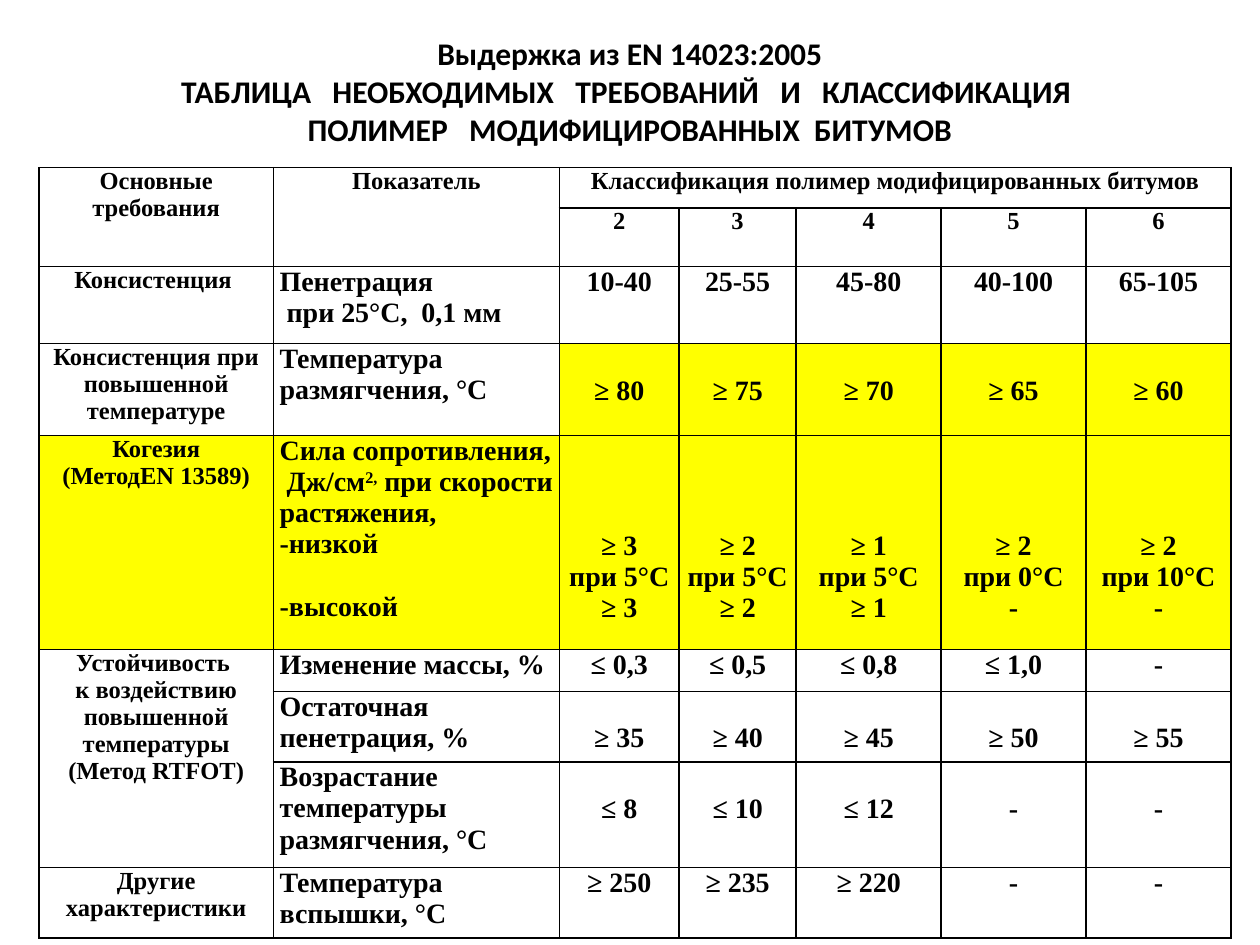
from lxml.etree import SubElement
from pptx import Presentation
from pptx.dml.color import RGBColor
from pptx.enum.text import PP_ALIGN as Align
from pptx.oxml.ns import qn
from pptx.util import Inches, Pt

BLACK = RGBColor(0, 0, 0)
YELLOW = RGBColor(255, 255, 0)
SERIF = "Times New Roman"
LINE = 0.25  # height of one 16 pt line, inches

TITLE = [
    "Выдержка из EN 14023:2005",
    "ТАБЛИЦА   НЕОБХОДИМЫХ   ТРЕБОВАНИЙ   И   КЛАССИФИКАЦИЯ ",
    "ПОЛИМЕР   МОДИФИЦИРОВАННЫХ  БИТУМОВ",
]
HEADS = ["Основные требования", "Показатель",
         "Классификация полимер модифицированных битумов"]
CLASSES = ["2", "3", "4", "5", "6"]

# requirement, indicator, values, lines above the values, yellow from column
ROWS = [
    ("Консистенция ", "Пенетрация\n при 25°С,  0,1 мм",
     ["10-40", "25-55", "45-80", "40-100", "65-105"], 0, None),
    ("Консистенция при повышенной температуре", "Температура размягчения, °С",
     ["≥ 80", "≥ 75", "≥ 70", "≥ 65", "≥ 60"], 1, 2),
    ("Когезия\n(МетодEN 13589)",
     "Сила сопротивления,  Дж/см^2,^ при скорости растяжения,\n-низкой\n-высокой",
     ["≥ 3\nпри 5°С\n≥ 3", "≥ 2\nпри 5°С\n≥ 2", "≥ 1\nпри 5°С\n≥ 1",
      "≥ 2\nпри 0°С\n-", "≥ 2\nпри 10°С\n-"], 3, 0),
    ("Устойчивость \nк воздействию повышенной температуры\n(Метод RTFOT)",
     "Изменение массы, %", ["≤ 0,3", "≤ 0,5", "≤ 0,8", "≤ 1,0", "-"], 0, None),
    ("", "Остаточная пенетрация, %",
     ["≥ 35", "≥ 40", "≥ 45", "≥ 50", "≥ 55"], 1, None),
    ("", "Возрастание температуры размягчения, °С",
     ["≤ 8", "≤ 10", "≤ 12", "-", "-"], 1, None),
    ("Другие характеристики", "Температура вспышки, °С",
     ["≥ 250", "≥ 235", "≥ 220", "-", "-"], 0, None),
]
WIDTHS = [1.86, 2.27, 0.95, 0.93, 1.15, 1.15, 1.15]
HEIGHTS = [0.32, 0.43, 0.61, 0.73, 1.7, 0.33, 0.56, 0.84, 0.56]
MERGES = [(0, 0, 1, 0), (0, 1, 1, 1), (0, 2, 0, 6), (5, 0, 7, 0)]


def write(frame, text, size=14, font=SERIF, align=Align.CENTER):
    """Fill a frame: one paragraph a line, superscript between ^ marks."""
    frame.word_wrap = True
    for i, line in enumerate(text.split("\n")):
        para = frame.add_paragraph() if i else frame.paragraphs[0]
        para.alignment = align
        para.font.size = Pt(size)
        for j, part in enumerate(line.split("^")):
            run = para.add_run()
            run.text = part
            run.font.name = font
            run.font.size = Pt(size)
            run.font.bold = True
            run.font.color.rgb = BLACK
            if j % 2:
                run.font._element.set("baseline", "30000")


def border(cell):
    props = cell._tc.get_or_add_tcPr()
    for i, side in enumerate(("a:lnL", "a:lnR", "a:lnT", "a:lnB")):
        edge = props.makeelement(qn(side), {"w": str(Pt(1))})
        fill = SubElement(edge, qn("a:solidFill"))
        SubElement(fill, qn("a:srgbClr"), val=str(BLACK))
        props.insert(i, edge)


def put(cell, text, drop=0, **style):
    cell.margin_top = Inches(drop * LINE)
    if text:
        write(cell.text_frame, text, **style)


def main():
    deck = Presentation()
    deck.slide_width, deck.slide_height = Inches(10), Inches(7.5)
    slide = deck.slides.add_slide(deck.slide_layouts[6])

    box = slide.shapes.add_textbox(Inches(0.5), Inches(0.27), Inches(9), Inches(1.11))
    box.text_frame.margin_top = 0
    write(box.text_frame, "\n".join(TITLE), size=18, font="Calibri")

    table = slide.shapes.add_table(
        len(HEIGHTS), len(WIDTHS), Inches(0.31), Inches(1.33),
        Inches(sum(WIDTHS)), Inches(sum(HEIGHTS))).table
    table.first_row = table.horz_banding = False
    for col, width in zip(table.columns, WIDTHS):
        col.width = Inches(width)
    for row, height in zip(table.rows, HEIGHTS):
        row.height = Inches(height)
    for top, left, low, right in MERGES:
        table.cell(top, left).merge(table.cell(low, right))
    for cell in (c for row in table.rows for c in row.cells):
        cell.margin_left = cell.margin_right = Inches(0.05)
        cell.margin_top = cell.margin_bottom = 0
        cell.fill.background()
        border(cell)

    for c, head in enumerate(HEADS):
        put(table.cell(0, c), head)
    for c, name in enumerate(CLASSES, 2):
        put(table.cell(1, c), name)
    for r, (need, mark, values, drop, yellow) in enumerate(ROWS, 2):
        put(table.cell(r, 0), need)
        put(table.cell(r, 1), mark, size=16, align=Align.LEFT)
        for c, value in enumerate(values, 2):
            put(table.cell(r, c), value, drop, size=16)
        if yellow is not None:
            for c in range(yellow, len(WIDTHS)):
                table.cell(r, c).fill.solid()
                table.cell(r, c).fill.fore_color.rgb = YELLOW
    # the high-speed label lines up with the third line of values
    table.cell(4, 1).text_frame.paragraphs[-1].space_before = Inches(LINE)

    deck.save("out.pptx")


if __name__ == "__main__":
    main()
